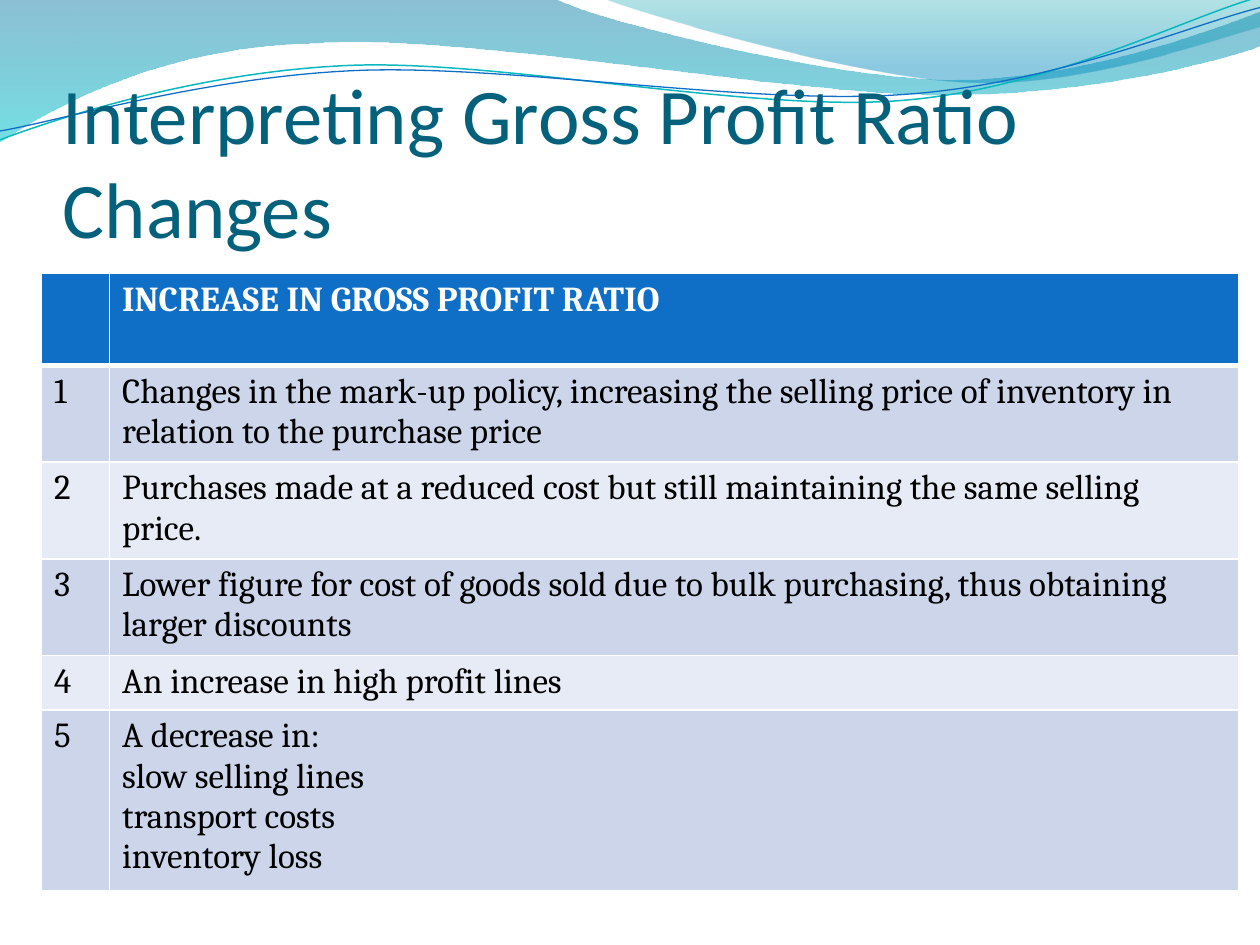
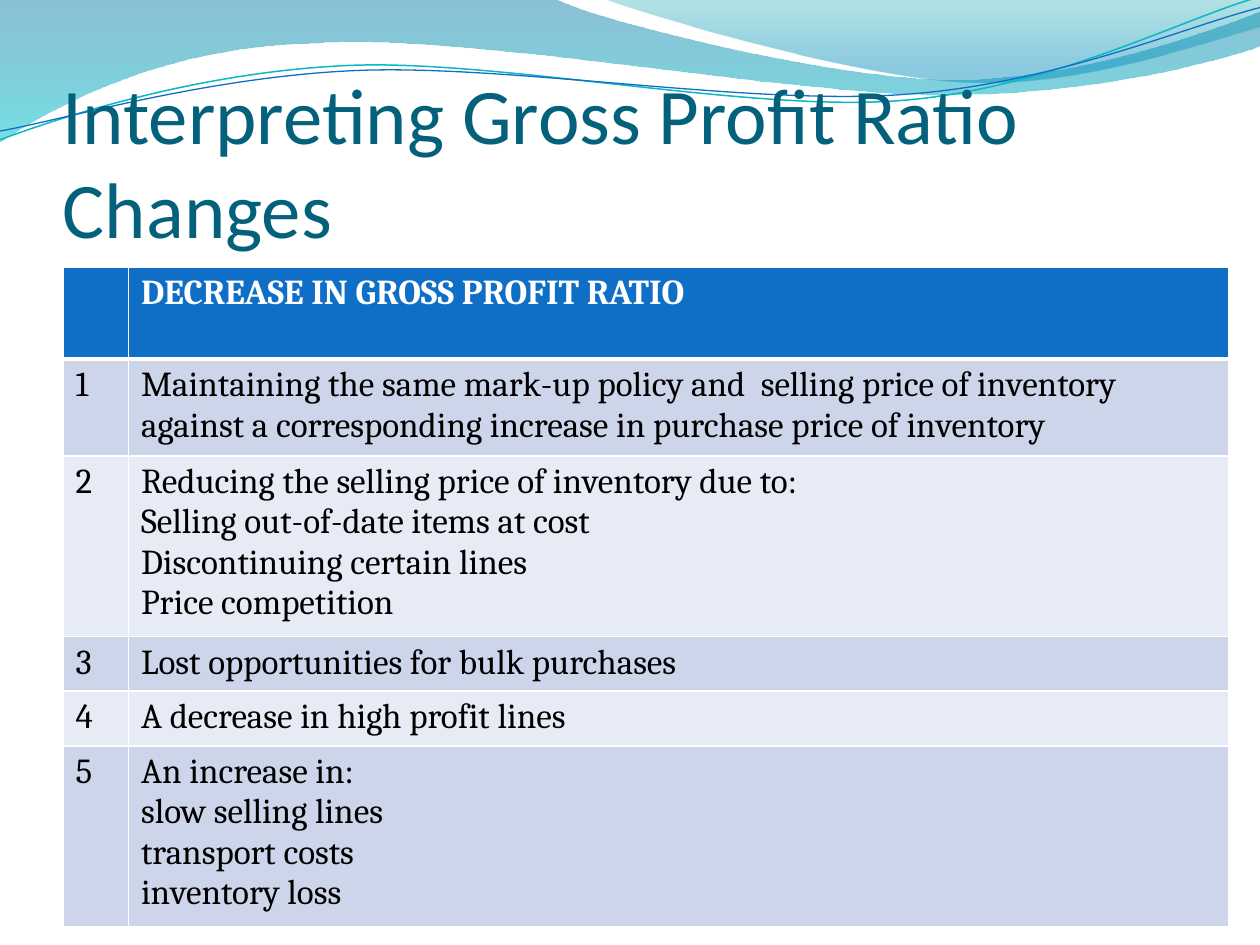
"""Build two slides on what raises and lowers the gross profit ratio."""
from dataclasses import dataclass

from lxml import etree
from pptx import Presentation
from pptx import util as u
from pptx.dml.color import RGBColor
from pptx.enum import text
from pptx.oxml.ns import qn


@dataclass(frozen=True)
class Theme:
    title_font: str = "Calibri"
    body_font: str = "Cambria"
    title_size: int = 45
    body_size: int = 20
    title: str = "04617B"
    header: str = "0F6FC6"
    bands: tuple = ("CCD5EA", "E7EBF5")
    white: str = "FFFFFF"
    black: str = "000000"
    teal_line: str = "0AB8BF"
    blue_line: str = "0F6FC6"
    left_ribbon: tuple = ((0, "0074A1", 45), (1, "00C6CF", 55))
    right_ribbon: tuple = ((0, "00A1A9", 30), (0.8, "008BBF", 45))


theme = Theme()
TITLE = "Interpreting Gross Profit Ratio Changes"
HEADER_HEIGHT = 0.73
ROW_HEIGHT = 0.41

# Each segment holds one point for a straight line or three for a cubic curve.
RIBBONS = [
    (theme.left_ribbon, (0, 0), [
        [(4.4, -0.01)],
        [(4.76, 0.17), (6.64, 0.63), (7.58, 0.63)],
        [(8.53, 0.63), (9.58, 0.26), (10, 0.09)],
        [(10.01, 0.36)],
        [(9.83, 0.44), (8.7, 0.76), (7.46, 0.75)],
        [(6.22, 0.75), (3.82, 0.28), (2.57, 0.34)],
        [(1.29, 0.36), (0.46, 0.83), (-0.01, 1.13)],
        [(0, 0)]]),
    (theme.right_ribbon, (4.79, -0.01), [
        [(5.09, 0.11), (6.82, 0.62), (7.69, 0.65)],
        [(8.56, 0.69), (9.61, 0.32), (10, 0.21)],
        [(10, 0)],
        [(4.79, -0.01)]]),
]
WAVE_LINES = [
    (theme.teal_line, 0.85, (0, 1.11), [
        [(0.48, 0.93), (1.58, 0.57), (2.77, 0.52)],
        [(3.95, 0.47), (5.93, 0.89), (7.13, 0.8)],
        [(8.33, 0.71), (9.38, 0.15), (9.98, -0.02)]]),
    (theme.blue_line, 0.75, (0, 1.04), [
        [(0.47, 0.96), (1.64, 0.61), (2.83, 0.56)],
        [(4.03, 0.51), (5.97, 0.84), (7.17, 0.75)],
        [(8.36, 0.67), (9.41, 0.21), (10, 0.06)]]),
]
TABLES = [
    ((0.33, 2.17), 4.93, (0.54, 8.96), "INCREASE IN GROSS PROFIT RATIO", [
        "Changes in the mark-up policy, increasing the selling price of "
        "inventory in relation to the purchase price",
        "Purchases made at a reduced cost but still maintaining the same "
        "selling price.",
        "Lower figure for cost of goods sold due to bulk purchasing, thus "
        "obtaining  larger discounts",
        "An increase in high profit lines",
        "A decrease in:\nslow selling lines\ntransport costs\ninventory loss"]),
    ((0.5, 2.12), 5.27, (0.52, 8.73), "DECREASE IN GROSS PROFIT RATIO", [
        "Maintaining the same mark-up policy and  selling price of inventory "
        "against a corresponding increase in purchase price of inventory",
        "Reducing the selling price of inventory due to:\n"
        "Selling out-of-date items at cost\nDiscontinuing certain lines\n"
        "Price competition",
        "Lost opportunities for bulk purchases",
        "A decrease in high profit lines",
        "An increase in:\nslow selling lines\ntransport costs\ninventory loss"]),
]


def add_wave(slide, start, segments, close):
    builder = slide.shapes.build_freeform(u.Inches(start[0]), u.Inches(start[1]))
    ends = [segment[-1] for segment in segments]
    builder.add_line_segments([(u.Inches(x), u.Inches(y)) for x, y in ends], close=close)
    shape = builder.convert_to_shape()
    shape.shadow.inherit = False
    straight_lines = list(shape._element.iter(qn("a:lnTo")))
    for straight_line, segment in zip(straight_lines, segments):
        if len(segment) == 3:
            curve = etree.Element(qn("a:cubicBezTo"))
            for x, y in segment:
                etree.SubElement(curve, qn("a:pt"), x=str(u.Inches(x) - shape.left),
                                 y=str(u.Inches(y) - shape.top))
            straight_line.getparent().replace(straight_line, curve)
    return shape


def style_cell(cell, fill, color, bold, widths):
    for paragraph in cell.text_frame.paragraphs:
        font = paragraph.font
        font.name = theme.body_font
        font.size = u.Pt(theme.body_size)
        font.bold = bold
        font.color.rgb = RGBColor.from_string(color)
    properties = cell._tc.get_or_add_tcPr()
    for side, width in zip("LRTB", widths):
        border = etree.SubElement(properties, qn(f"a:ln{side}"), w=str(u.Pt(width)))
        solid = etree.SubElement(border, qn("a:solidFill"))
        etree.SubElement(solid, qn("a:srgbClr"), val=theme.white)
    cell.fill.solid()
    cell.fill.fore_color.rgb = RGBColor.from_string(fill)


presentation = Presentation()
presentation.slide_width = u.Inches(10)
presentation.slide_height = u.Inches(7.5)
layout = presentation.slide_layouts[6]
slides = [presentation.slides.add_slide(layout) for table in TABLES]

waves = []
for stops, start, segments in RIBBONS:
    ribbon = add_wave(slides[0], start, segments, True)
    ribbon.line.fill.background()
    ribbon.fill.gradient()
    ribbon.fill.gradient_angle = 270
    for stop, (position, color, opacity) in zip(ribbon.fill.gradient_stops, stops):
        stop.position = position
        stop.color.rgb = RGBColor.from_string(color)
    colors = list(ribbon._element.spPr.iter(qn("a:srgbClr")))
    for element, (position, color, opacity) in zip(colors, stops):
        etree.SubElement(element, qn("a:alpha"), val=str(opacity * 1000))
    waves.append(ribbon)

for color, width, start, segments in WAVE_LINES:
    wave_line = add_wave(slides[0], start, segments, False)
    wave_line.fill.background()
    wave_line.line.color.rgb = RGBColor.from_string(color)
    wave_line.line.width = u.Pt(width)
    waves.append(wave_line)

for number, wave in enumerate(waves, 101):
    wave._element.nvSpPr.cNvPr.set("id", str(number))
    layout.shapes._spTree.append(wave._element)

for slide, ((left, top), height, column_widths, heading, reasons) in zip(slides, TABLES):
    title = slide.shapes.add_textbox(u.Inches(0.5), u.Inches(0.77), u.Inches(9), u.Inches(1.25))
    frame = title.text_frame
    frame.word_wrap = True
    frame.vertical_anchor = text.MSO_ANCHOR.BOTTOM
    frame.margin_left = frame.margin_right = frame.margin_bottom = 0
    frame.margin_top = u.Inches(0.05)
    paragraph = frame.paragraphs[0]
    paragraph.text = TITLE
    paragraph.font.name = theme.title_font
    paragraph.font.size = u.Pt(theme.title_size)
    paragraph.font.color.rgb = RGBColor.from_string(theme.title)

    rows = [("", heading)]
    rows += [(str(number), reason) for number, reason in enumerate(reasons, 1)]
    table_shape = slide.shapes.add_table(
        len(rows), 2, u.Inches(left), u.Inches(top),
        u.Inches(sum(column_widths)), u.Inches(height))
    table = table_shape.table
    for column, width in zip(table.columns, column_widths):
        column.width = u.Inches(width)
    for index, contents in enumerate(rows):
        is_header = index == 0
        table.rows[index].height = u.Inches(HEADER_HEIGHT if is_header else ROW_HEIGHT)
        fill = theme.header if is_header else theme.bands[(index - 1) % 2]
        color = theme.white if is_header else theme.black
        widths = (1, 1, 3 if index == 1 else 1, 3 if is_header else 1)
        for cell, content in zip(table.rows[index].cells, contents):
            cell.text = content
            style_cell(cell, fill, color, is_header, widths)
    table_shape.height = u.Inches(height)

presentation.save("out.pptx")
